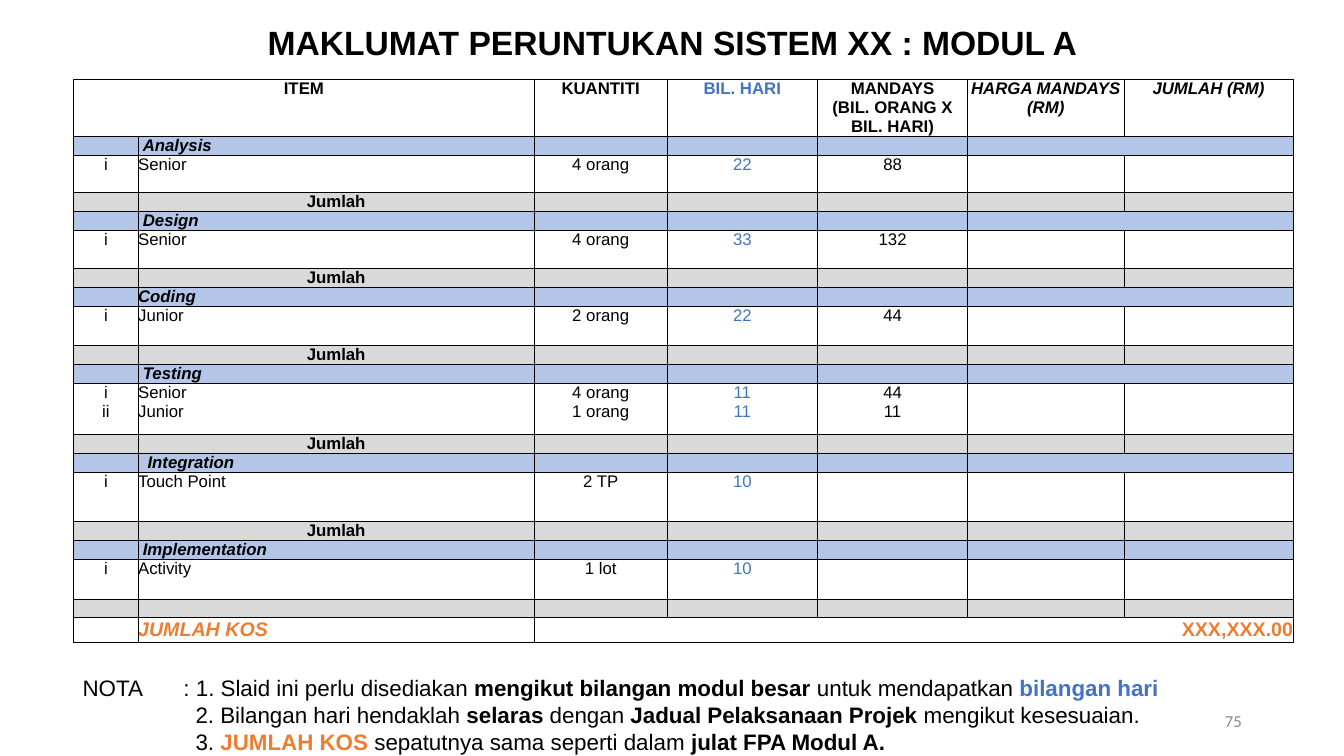
from dataclasses import dataclass, replace
from typing import NamedTuple

from lxml.etree import SubElement
from pptx import Presentation
from pptx.dml.color import RGBColor
from pptx.enum.text import MSO_ANCHOR, MSO_AUTO_SIZE, PP_ALIGN
from pptx.oxml.ns import qn
from pptx.util import Inches, Pt

BLACK = RGBColor(0x00, 0x00, 0x00)
WHITE = RGBColor(0xFF, 0xFF, 0xFF)
BLUE = RGBColor(0x44, 0x72, 0xC4)
ORANGE = RGBColor(0xED, 0x7D, 0x31)
GRAY = RGBColor(0x8C, 0x8C, 0x8C)
PHASE_FILL = RGBColor(0xB4, 0xC6, 0xE7)
SUBTOTAL_FILL = RGBColor(0xD9, 0xD9, 0xD9)

SLIDE_WIDTH, SLIDE_HEIGHT = Inches(13.33), Inches(7.5)
GRID_COLUMN, GRID_ROW = SLIDE_WIDTH / 100, SLIDE_HEIGHT / 75

COLUMN_WIDTHS = [4.8, 29.47, 9.9, 11.18, 11.18, 11.62, 12.6]
HEADER_HEIGHT, BAND_HEIGHT, TOTAL_HEIGHT = 5.6, 1.8, 2.5
PRICE_COLUMN, LAST_COLUMN = 5, 6


@dataclass(frozen=True)
class Style:
    size: float = 12
    color: RGBColor = BLACK
    bold: bool = False
    italic: bool = False
    name: str = "Arial"
    align: PP_ALIGN = PP_ALIGN.CENTER


class Span(NamedTuple):
    text: str
    bold: bool = False
    color: RGBColor = BLACK


class Item(NamedTuple):
    role: str
    quantity: str
    days: str
    mandays: str = ""


class Phase(NamedTuple):
    name: str
    indent: float
    height: float
    items: list[Item]
    subtotal: str = "Jumlah"


PLAIN = Style()
LEFT = Style(align=PP_ALIGN.LEFT)
DAYS = Style(color=BLUE)
HEADER = Style(bold=True)
PHASE_NAME = Style(bold=True, italic=True, align=PP_ALIGN.LEFT)
TOTAL = Style(size=14, color=ORANGE, bold=True, italic=True, align=PP_ALIGN.LEFT)

HEADERS = [
    (0, ["ITEM"], HEADER),
    (2, ["KUANTITI"], HEADER),
    (3, ["BIL. HARI"], replace(HEADER, color=BLUE)),
    (4, ["MANDAYS", "(BIL. ORANG X BIL. HARI)"], HEADER),
    (5, ["HARGA MANDAYS", "(RM)"], replace(HEADER, italic=True)),
    (6, ["JUMLAH (RM)"], replace(HEADER, italic=True)),
]
PHASES = [
    Phase("Analysis", 0.35, 3.7, [Item("Senior", "4 orang", "22", "88")]),
    Phase("Design", 0.35, 3.8, [Item("Senior", "4 orang", "33", "132")]),
    Phase("Coding", 0, 3.9, [Item("Junior", "2 orang", "22", "44")]),
    Phase("Testing", 0.35, 5.1, [Item("Senior", "4 orang", "11", "44"),
                                 Item("Junior", "1 orang", "11", "11")]),
    Phase("Integration", 0.7, 4.9, [Item("Touch Point", "2 TP", "10")]),
    Phase("Implementation", 0.35, 4, [Item("Activity", "1 lot", "10")], ""),
]
NOTES = [
    [Span("NOTA\t: 1. Slaid ini perlu disediakan "),
     Span("mengikut bilangan modul besar ", True),
     Span("untuk mendapatkan "), Span("bilangan hari", True, BLUE)],
    [Span("2. Bilangan hari hendaklah "), Span("selaras ", True), Span("dengan "),
     Span("Jadual Pelaksanaan Projek ", True), Span("mengikut kesesuaian.")],
    [Span("3. "), Span("JUMLAH KOS ", True, ORANGE),
     Span("sepatutnya sama seperti dalam "), Span("julat FPA Modul A.", True)],
]


def across(columns: float) -> int:
    return round(columns * GRID_COLUMN)


def down(rows: float) -> int:
    return round(rows * GRID_ROW)


def place(shape, left: float, top: float, width: float, height: float) -> None:
    shape.left, shape.top = across(left), down(top)
    shape.width, shape.height = across(width), down(height)


def format_paragraph(paragraph, style: Style) -> None:
    paragraph.alignment = style.align
    font = paragraph.font
    font.name, font.size = style.name, Pt(style.size)
    font.bold, font.italic = style.bold, style.italic
    font.color.rgb = style.color


def write_lines(text_frame, lines: list[str], style: Style) -> None:
    text_frame.text = "\n".join(lines)
    for paragraph in text_frame.paragraphs:
        format_paragraph(paragraph, style)


def draw_border(cell, side: str, width: float) -> None:
    line = SubElement(cell._tc.get_or_add_tcPr(), qn(f"a:{side}"), w=str(Pt(width)))
    if width:
        fill = SubElement(line, qn("a:solidFill"))
        SubElement(fill, qn("a:srgbClr"), val=str(BLACK))
    else:
        SubElement(line, qn("a:noFill"))


def prepare_cell(cell, row: int, column: int, last_row: int, fill: RGBColor, joined: bool) -> None:
    cell.margin_left = cell.margin_right = cell.margin_top = cell.margin_bottom = 0
    draw_border(cell, "lnL", 0 if joined and column == LAST_COLUMN else 1 if column == 0 else 0.5)
    draw_border(cell, "lnR", 0 if joined and column == PRICE_COLUMN else 1 if column == LAST_COLUMN else 0.5)
    draw_border(cell, "lnT", 1 if row <= 1 else 0.5)
    draw_border(cell, "lnB", 1 if row in (0, last_row) else 0.5)
    cell.fill.solid()
    cell.fill.fore_color.rgb = fill
    format_paragraph(cell.text_frame.paragraphs[0], PLAIN)
    end = SubElement(cell.text_frame.paragraphs[0]._p, qn("a:endParaRPr"), sz="1000")
    SubElement(end, qn("a:latin"), typeface=PLAIN.name)


def fill_phase(table, phase: Phase, row: int) -> None:
    name_cell = table.cell(row, 1)
    name_cell.margin_left = across(phase.indent)
    write_lines(name_cell.text_frame, [phase.name], PHASE_NAME)
    numerals = ["i", "ii"][:len(phase.items)]
    details = [numerals, *map(list, zip(*phase.items))]
    for column, (lines, style) in enumerate(zip(details, [PLAIN, LEFT, PLAIN, DAYS, PLAIN])):
        if any(lines):
            write_lines(table.cell(row + 1, column).text_frame, lines, style)
    if phase.subtotal:
        write_lines(table.cell(row + 2, 1).text_frame, [phase.subtotal], HEADER)


def add_cost_table(slide) -> None:
    heights = [HEADER_HEIGHT]
    fills = [WHITE]
    for phase in PHASES:
        heights += [BAND_HEIGHT, phase.height, BAND_HEIGHT]
        fills += [PHASE_FILL, WHITE, SUBTOTAL_FILL]
    heights.append(TOTAL_HEIGHT)
    fills.append(WHITE)
    last_row = len(heights) - 1
    final_phase_row = last_row - 3

    frame = slide.shapes.add_table(len(heights), len(COLUMN_WIDTHS), across(5.48), down(7.9),
                                   across(sum(COLUMN_WIDTHS)), down(sum(heights)))
    table = frame.table
    table.first_row = table.horz_banding = False
    for column, width in zip(table.columns, COLUMN_WIDTHS):
        column.width = across(width)
    for row, (height, fill) in enumerate(zip(heights, fills)):
        table.rows[row].height = down(height)
        joined = fill == PHASE_FILL and row != final_phase_row
        for column in range(len(COLUMN_WIDTHS)):
            prepare_cell(table.cell(row, column), row, column, last_row, fill, joined)

    table.cell(0, 0).merge(table.cell(0, 1))
    table.cell(last_row, 2).merge(table.cell(last_row, LAST_COLUMN))
    for column, lines, style in HEADERS:
        write_lines(table.cell(0, column).text_frame, lines, style)
    for index, phase in enumerate(PHASES):
        fill_phase(table, phase, 1 + 3 * index)
    amount = replace(TOTAL, italic=False, align=PP_ALIGN.RIGHT)
    for column, text, style in [(1, "JUMLAH KOS", TOTAL), (2, "XXX,XXX.00", amount)]:
        cell = table.cell(last_row, column)
        cell.vertical_anchor = MSO_ANCHOR.MIDDLE
        write_lines(cell.text_frame, [text], style)


def add_notes(body) -> None:
    place(body, 5.4, 66.4, 81.9, 9.1)
    body.text_frame.auto_size = MSO_AUTO_SIZE.NONE
    for index, spans in enumerate(NOTES):
        paragraph = body.text_frame.paragraphs[0] if index == 0 else body.text_frame.add_paragraph()
        format_paragraph(paragraph, replace(LEFT, size=16))
        paragraph.space_before = Pt(0)
        properties = paragraph._p.get_or_add_pPr()
        properties.set("marL", str(across(8.4) if index else 0))
        properties.set("indent", "0")
        properties.insert(1, SubElement(properties, qn("a:buNone")))
        for span in spans:
            run = paragraph.add_run()
            run.text = span.text
            run.font.bold = span.bold
            run.font.color.rgb = span.color


def main() -> None:
    presentation = Presentation()
    presentation.slide_width, presentation.slide_height = SLIDE_WIDTH, SLIDE_HEIGHT
    slide = presentation.slides.add_slide(presentation.slide_layouts[1])
    add_cost_table(slide)
    title = slide.shapes.title
    place(title, 6.9, 1.5, 86.27, 5.4)
    title.text_frame.vertical_anchor = MSO_ANCHOR.MIDDLE
    write_lines(title.text_frame, ["MAKLUMAT PERUNTUKAN SISTEM XX : MODUL A"], Style(size=24, bold=True))
    add_notes(slide.placeholders[1])
    page_number = slide.shapes.add_textbox(across(70.65), down(69.5), across(22.5), down(4))
    page_number.text_frame.vertical_anchor = MSO_ANCHOR.MIDDLE
    write_lines(page_number.text_frame, ["75"], Style(color=GRAY, name="Calibri", align=PP_ALIGN.RIGHT))
    presentation.save("out.pptx")


if __name__ == "__main__":
    main()
